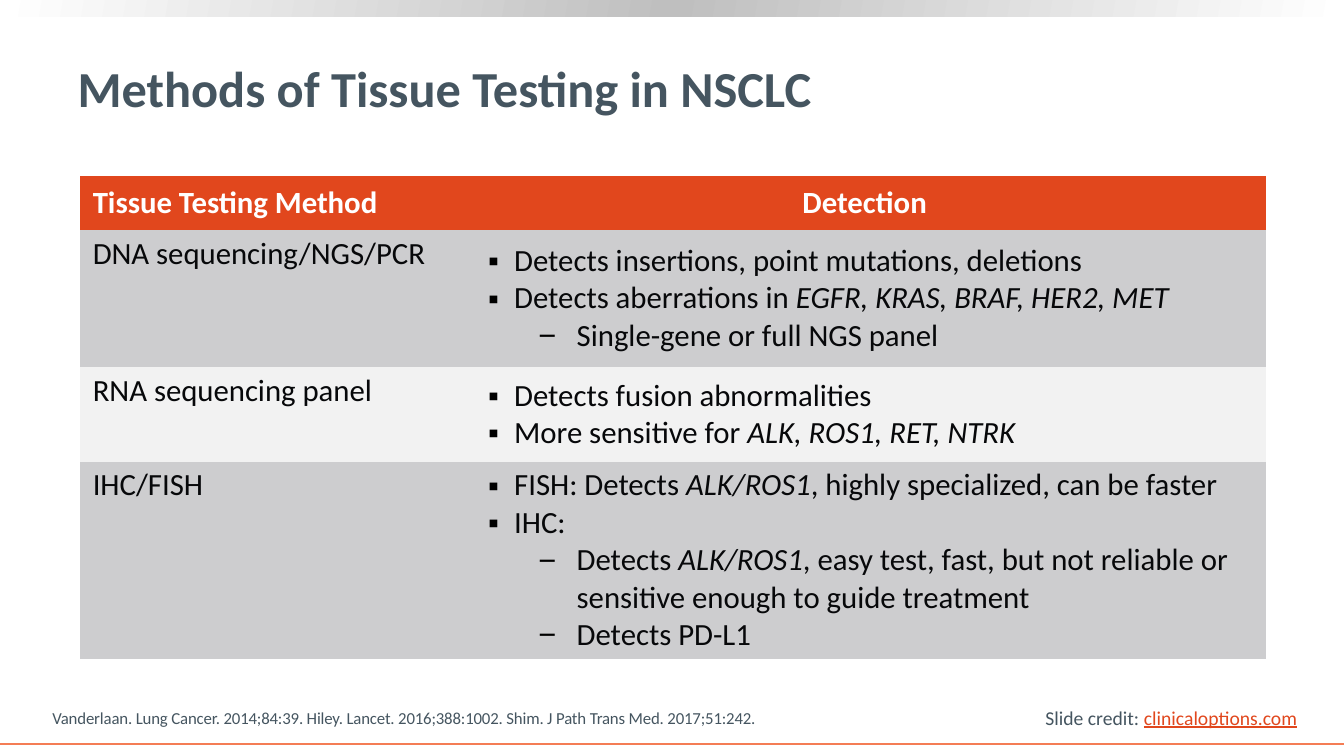
from lxml import etree
from pptx import Presentation
from pptx import util as u
from pptx.dml.color import RGBColor
from pptx.enum import shapes, text
from pptx.oxml import ns

Inches = u.Inches
SLATE = RGBColor(0x45, 0x55, 0x60)
ORANGE = RGBColor(0xE1, 0x47, 0x1D)
RULE_ORANGE = RGBColor(0xF4, 0x7D, 0x55)
WHITE = RGBColor(0xFF, 0xFF, 0xFF)
INK = RGBColor(0x07, 0x08, 0x0A)
BAND_DARK = RGBColor(0xCD, 0xCD, 0xCF)
BAND_LIGHT = RGBColor(0xF2, 0xF2, 0xF2)
BAR_GREY = RGBColor(0xBF, 0xBF, 0xBF)
NO_GRID_STYLE = "{2D5ABB26-0587-4C30-8999-92F81FD0307C}"
BULLETS = [("▪", 0.38, -0.26), ("−", 1, -0.38)]

HEADINGS = ["Tissue Testing Method", "Detection"]
METHODS = [
    ("DNA sequencing/NGS/PCR", 1.36, [
        (0, "Detects insertions, point mutations, deletions"),
        (0, "Detects aberrations in *EGFR, KRAS, BRAF, HER2, MET*"),
        (1, "Single-gene or full NGS panel"),
    ]),
    ("RNA sequencing panel", 0.94, [
        (0, "Detects fusion abnormalities"),
        (0, "More sensitive for *ALK, ROS1, RET, NTRK*"),
    ]),
    ("IHC/FISH", 1.95, [
        (0, "FISH: Detects *ALK/ROS1*, highly specialized, can be faster"),
        (0, "IHC:"),
        (1, "Detects *ALK/ROS1*, easy test, fast, but not reliable or "
            "sensitive enough to guide treatment"),
        (1, "Detects PD-L1"),
    ]),
]


def apply(target, values):
    for name, value in values.items():
        setattr(target, name, value)


def add_run(paragraph, words, size, color, **style):
    run = paragraph.add_run()
    run.text = words
    apply(run.font, {"name": "Calibri", "size": u.Pt(size), **style})
    run.font.color.rgb = color
    return run


def add_child(parent, tag, **attributes):
    return etree.SubElement(parent, ns.qn(tag), attributes)


def add_bullet(paragraph, level):
    mark, left, indent = BULLETS[level]
    properties = paragraph._p.get_or_add_pPr()
    properties.set("marL", str(Inches(left)))
    properties.set("indent", str(Inches(indent)))
    color = add_child(properties, "a:buClr")
    add_child(color, "a:srgbClr", val="000000")
    add_child(properties, "a:buFont", typeface="Arial")
    add_child(properties, "a:buChar", char=mark)
    paragraph.level = level


def add_top_bar(slide, left, top, width, height):
    bar = slide.shapes.add_shape(
        shapes.MSO_SHAPE.RECTANGLE, Inches(left), Inches(top), Inches(width), Inches(height))
    bar.shadow.inherit = False
    bar.line.fill.background()
    bar.fill.gradient()
    gradient = bar._element.spPr.find(ns.qn("a:gradFill"))
    for child in list(gradient):
        gradient.remove(child)
    stops = add_child(gradient, "a:gsLst")
    for position, color in [(0, WHITE), (50, BAR_GREY), (100, WHITE)]:
        stop = add_child(stops, "a:gs", pos=str(position * 1000))
        add_child(stop, "a:srgbClr", val=str(color))
    add_child(gradient, "a:lin", ang=str(190 * 60000), scaled="0")


def add_title(slide, left, top, width, height):
    title = slide.shapes.title
    apply(title, {"left": Inches(left), "top": Inches(top),
                  "width": Inches(width), "height": Inches(height)})
    apply(title.text_frame, {"vertical_anchor": text.MSO_ANCHOR.MIDDLE,
                             "auto_size": text.MSO_AUTO_SIZE.NONE, "word_wrap": True})
    heading = title.text_frame.paragraphs[0]
    heading.alignment = text.PP_ALIGN.LEFT
    add_run(heading, "Methods of Tissue Testing in NSCLC", 36, SLATE, bold=True)


def format_cell(cell, fill, anchor):
    cell.fill.solid()
    cell.fill.fore_color.rgb = fill
    apply(cell, {"margin_left": Inches(0.13), "margin_right": Inches(0.13),
                 "margin_top": Inches(0.05), "margin_bottom": Inches(0.05),
                 "vertical_anchor": anchor})
    return cell.text_frame


def add_methods_table(slide, left, top, width, header_height):
    heights = [header_height] + [height for _, height, _ in METHODS]
    frame = slide.shapes.add_table(
        len(heights), 2, Inches(left), Inches(top), Inches(width), Inches(sum(heights)))
    table = frame.table
    table.horz_banding = False
    table._tbl.tblPr.find(ns.qn("a:tableStyleId")).text = NO_GRID_STYLE
    method_width = 3.8
    for column, size in zip(table.columns, [method_width, width - method_width]):
        column.width = Inches(size)
    for row, height in zip(table.rows, heights):
        row.height = Inches(height)

    middle, upper = text.MSO_ANCHOR.MIDDLE, text.MSO_ANCHOR.TOP
    alignments = [text.PP_ALIGN.LEFT, text.PP_ALIGN.CENTER]
    for column, (heading, alignment) in enumerate(zip(HEADINGS, alignments)):
        paragraph = format_cell(table.cell(0, column), ORANGE, middle).paragraphs[0]
        paragraph.alignment = alignment
        add_run(paragraph, heading, 22, WHITE, bold=True)

    for row, (method, _, findings) in enumerate(METHODS, start=1):
        band = BAND_DARK if row % 2 else BAND_LIGHT
        label = format_cell(table.cell(row, 0), band, upper).paragraphs[0]
        add_run(label, method, 22, INK, bold=False)
        detection = format_cell(table.cell(row, 1), band, middle)
        for index, (level, finding) in enumerate(findings):
            paragraph = detection.add_paragraph() if index else detection.paragraphs[0]
            add_bullet(paragraph, level)
            for part, words in enumerate(finding.split("*")):
                if words:
                    add_run(paragraph, words, 22, INK, bold=False, italic=part % 2 == 1)


def add_note(slide, left, top, width, height, **frame_format):
    note = slide.shapes.add_textbox(Inches(left), Inches(top), Inches(width), Inches(height))
    apply(note.text_frame, frame_format)
    return note.text_frame.paragraphs[0]


def add_footer(slide, left, top, width):
    citation = add_note(slide, left + 0.36, top + 0.04, 9.82, 0.28, word_wrap=True,
                        margin_left=Inches(0.16), vertical_anchor=text.MSO_ANCHOR.BOTTOM)
    citation.line_spacing = 0.9
    add_run(citation, "Vanderlaan. Lung Cancer. 2014;84:39. Hiley. Lancet. 2016;388:1002. "
            "Shim. J Path Trans Med. 2017;51:242.", 12, SLATE)._r.rPr.set("spc", "-10")

    credit = add_note(slide, left + 10.27, top, 2.72, 0.34, word_wrap=False)
    add_run(credit, "Slide credit: ", 14, SLATE)
    add_run(credit, "clinicaloptions.com", 14, ORANGE, underline=True)

    rule_top = Inches(top + 0.43)
    rule = slide.shapes.add_connector(
        shapes.MSO_CONNECTOR.STRAIGHT, Inches(left), rule_top, Inches(left + width), rule_top)
    rule.line.color.rgb = RULE_ORANGE
    rule.line.width = u.Pt(1.5)
    add_child(rule._element.spPr, "a:effectLst")


def main():
    deck = Presentation()
    deck.slide_width, deck.slide_height = Inches(13.33), Inches(7.5)
    slide = deck.slides.add_slide(deck.slide_layouts[5])
    add_top_bar(slide, 0, 0, 13.33, 0.16)
    add_title(slide, 0.67, 0.26, 12.18, 1.21)
    add_methods_table(slide, 0.79, 1.75, 11.77, 0.53)
    add_footer(slide, 0, 6.95, 13.33)
    deck.save("out.pptx")


if __name__ == "__main__":
    main()
